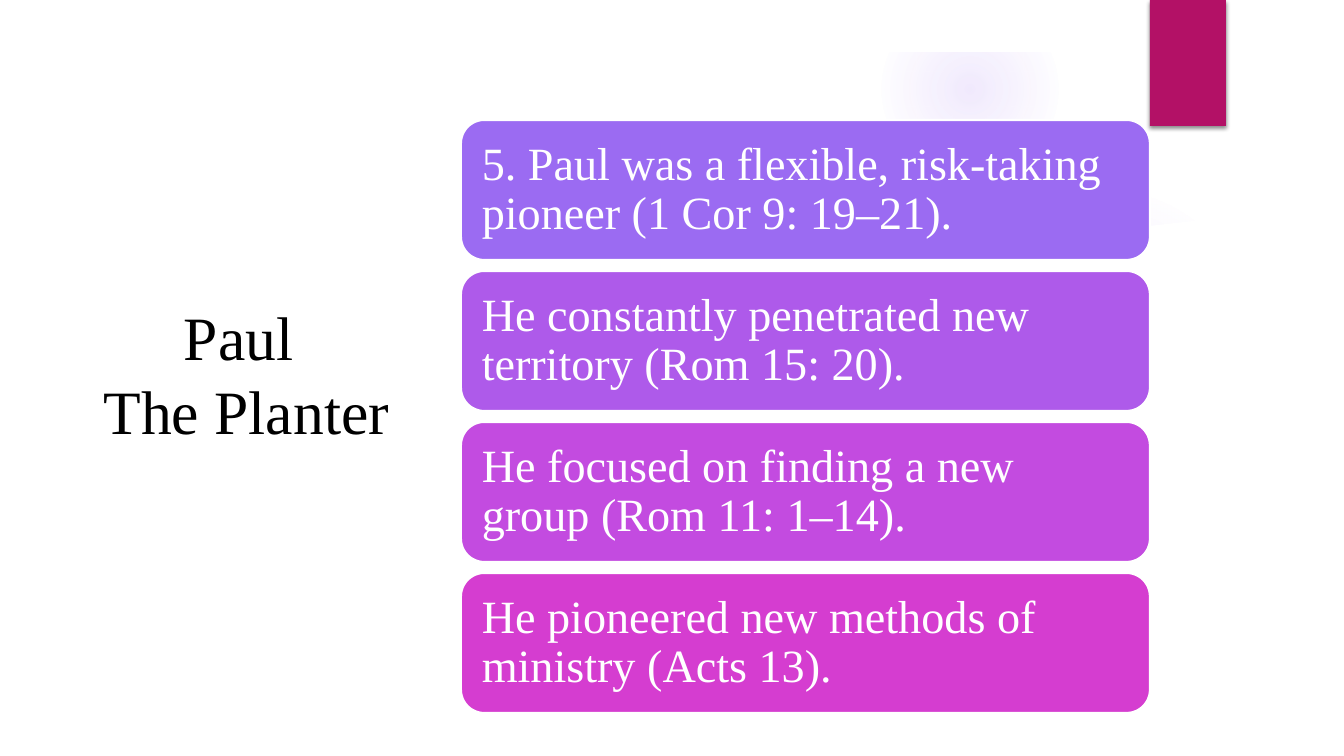
"""Builds the "Paul The Planter" slide with its four stacked cards."""
from dataclasses import dataclass

from lxml import etree
from pptx import Presentation
from pptx.dml.color import RGBColor
from pptx.enum.shapes import MSO_SHAPE
from pptx.enum.text import MSO_ANCHOR, MSO_AUTO_SIZE, PP_ALIGN
from pptx.oxml import parse_xml
from pptx.oxml.ns import nsdecls, qn
from pptx.util import Pt

EMU_PER_PX = 914400 / 100.8
OVAL = MSO_SHAPE.OVAL
RECTANGLE = MSO_SHAPE.RECTANGLE
ROUNDED = MSO_SHAPE.ROUNDED_RECTANGLE
MIDDLE = MSO_ANCHOR.MIDDLE
NO_AUTOFIT = MSO_AUTO_SIZE.NONE
CENTER = PP_ALIGN.CENTER
LEFT = PP_ALIGN.LEFT
TITLE_ONLY = 5


@dataclass(frozen=True)
class Theme:
    font: str = "Times New Roman"
    title_size: int = 44
    card_size: int = 33
    ink: str = "000000"
    paper: str = "FFFFFF"
    glow: str = "9B6BF2"
    tab: str = "B31166"
    cards: tuple = ("9B6BF2", "AE5AEA", "C34BE0", "D53DD0")


def px(length):
    return round(length * EMU_PER_PX)


class SlideBuilder:
    def __init__(self, slide, theme):
        self.slide = slide
        self.theme = theme

    def paint(self, shape, color):
        shape.shadow.inherit = False
        shape.fill.solid()
        shape.fill.fore_color.rgb = RGBColor.from_string(color)
        shape.line.fill.background()

    def block(self, kind, box, color):
        shape = self.slide.shapes.add_shape(kind, *map(px, box))
        self.paint(shape, color)
        return shape

    def panel(self, points):
        builder = self.slide.shapes.build_freeform(*points[0], scale=EMU_PER_PX)
        builder.add_line_segments(points[1:], close=True)
        self.paint(builder.convert_to_shape(), self.theme.paper)

    def glow(self, box, stops):
        shape = self.block(OVAL, box, self.theme.glow)
        stop_xml = "".join(
            f'<a:gs pos="{position * 1000}"><a:srgbClr val="{self.theme.glow}">'
            f'<a:alpha val="{alpha * 1000}"/></a:srgbClr></a:gs>'
            for position, alpha in stops
        )
        gradient = parse_xml(
            f'<a:gradFill {nsdecls("a")}><a:gsLst>{stop_xml}</a:gsLst>'
            '<a:path path="circle"><a:fillToRect l="50000" t="50000" r="50000" b="50000"/>'
            "</a:path></a:gradFill>"
        )
        properties = shape._element.spPr
        properties.replace(properties.find(qn("a:solidFill")), gradient)

    def tab(self, box):
        shape = self.block(RECTANGLE, box, self.theme.tab)
        effects = shape._element.spPr.find(qn("a:effectLst"))
        shadow = etree.SubElement(
            effects, qn("a:outerShdw"), blurRad=str(Pt(3)), dist=str(Pt(2)), dir="5400000"
        )
        color = etree.SubElement(shadow, qn("a:srgbClr"), val=self.theme.ink)
        etree.SubElement(color, qn("a:alpha"), val="45000")

    def set_text(self, shape, text, size, color, alignment):
        frame = shape.text_frame
        frame.word_wrap = True
        frame.auto_size = NO_AUTOFIT
        frame.vertical_anchor = MIDDLE
        paragraph = frame.paragraphs[0]
        paragraph.text = text
        paragraph.alignment = alignment
        paragraph.font.name = self.theme.font
        paragraph.font.size = Pt(size)
        paragraph.font.color.rgb = RGBColor.from_string(color)
        return paragraph

    def title(self, box, text):
        title = self.slide.shapes.title
        title.left, title.top, title.width, title.height = map(px, box)
        self.set_text(title, text, self.theme.title_size, self.theme.ink, CENTER)
        self.slide.shapes._spTree.append(title._element)

    def card(self, box, text, color):
        shape = self.block(ROUNDED, box, color)
        shape.line.color.rgb = RGBColor.from_string(self.theme.paper)
        shape.line.width = Pt(1.5)
        frame = shape.text_frame
        frame.margin_left = frame.margin_right = px(14)
        frame.margin_top = frame.margin_bottom = px(14)
        paragraph = self.set_text(shape, text, self.theme.card_size, self.theme.paper, LEFT)
        paragraph.line_spacing = 0.9


def main():
    presentation = Presentation()
    presentation.slide_width, presentation.slide_height = px(1344), px(756)
    slide = presentation.slides.add_slide(presentation.slide_layouts[TITLE_ONLY])
    theme = Theme()
    builder = SlideBuilder(slide, theme)

    builder.glow((949, 184, 310, 310), ((0, 7), (36, 6), (69, 0)))
    builder.glow((882, 1, 176, 176), ((0, 14), (36, 7), (73, 0)))
    builder.panel([
        (50, 206), (251, 226), (448, 243), (757, 250), (957, 243), (1097, 232),
        (1210, 219), (1294, 206), (1294, 706), (50, 706),
    ])
    builder.block(RECTANGLE, (0, 0, 1344, 52), theme.paper)
    builder.tab((1150, 0, 76, 126))
    builder.title((57, 69, 379, 607), "Paul \vThe Planter")

    points = (
        "5. Paul was a flexible, risk-taking pioneer (1 Cor 9: 19–21).",
        "He constantly penetrated new territory (Rom 15: 20).",
        "He focused on finding a new group (Rom 11: 1–14).",
        "He pioneered new methods of ministry (Acts 13).",
    )
    for row, (text, color) in enumerate(zip(points, theme.cards)):
        builder.card((461, 120 + 151 * row, 689, 140), text, color)

    presentation.save("out.pptx")


if __name__ == "__main__":
    main()
